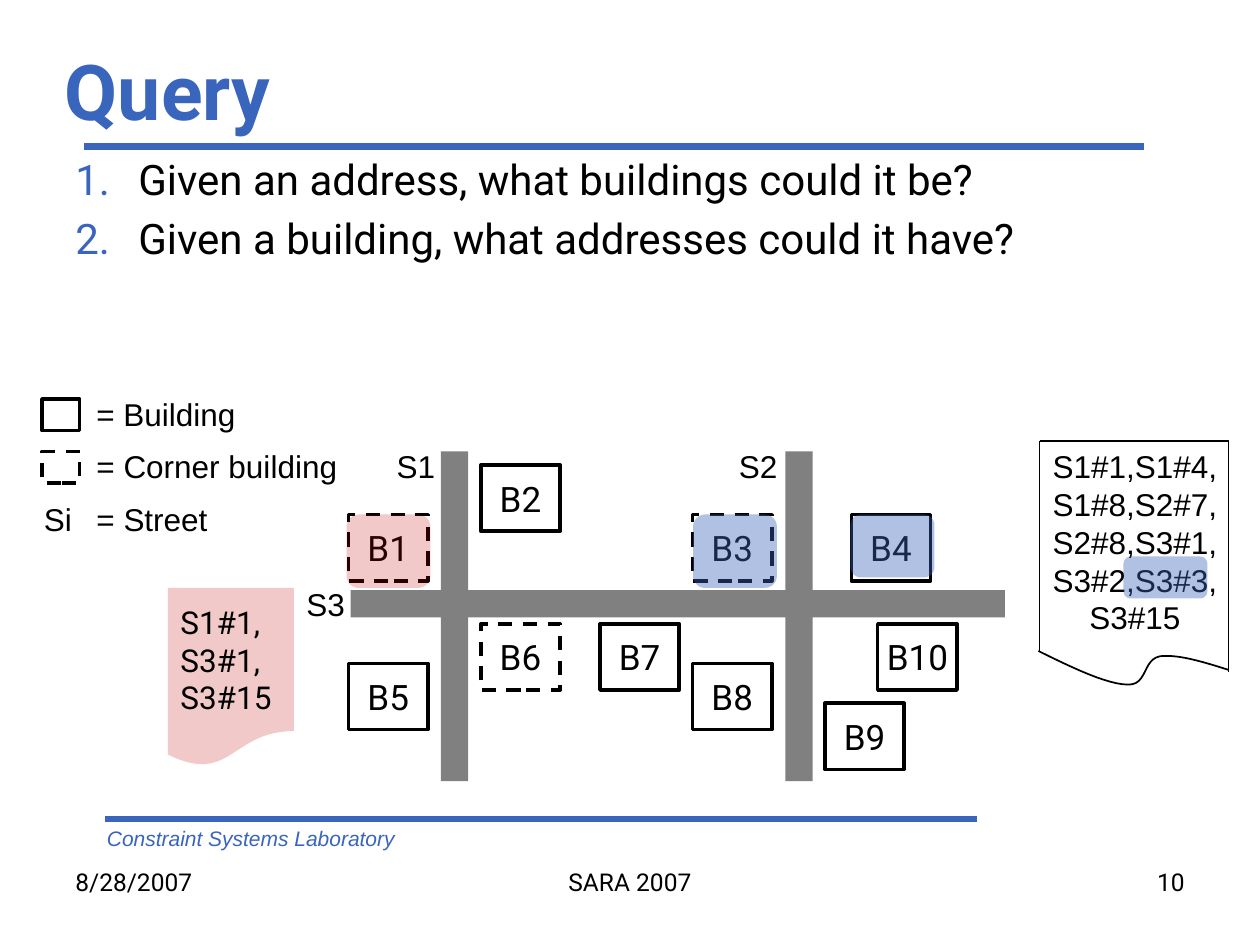
"""Build the Query slide: a street map of buildings with possible addresses."""
import lxml.etree
import pptx
import pptx.dml.color
import pptx.enum.dml
import pptx.enum.shapes
import pptx.enum.text
import pptx.oxml.ns
import pptx.util

COLORS = {"blue": "3A65BC", "black": "000000", "white": "FFFFFF", "gray": "808080", "red": "C00000"}
SHAPES = pptx.enum.shapes.MSO_SHAPE
ALIGN = pptx.enum.text.PP_ALIGN
ANCHOR = pptx.enum.text.MSO_ANCHOR
FIT = pptx.enum.text.MSO_AUTO_SIZE.SHAPE_TO_FIT_TEXT
DASH = pptx.enum.dml.MSO_LINE.DASH
RGB = pptx.dml.color.RGBColor.from_string
qn = pptx.oxml.ns.qn

deck = pptx.Presentation()
deck.slide_width, deck.slide_height = pptx.util.Inches(10), pptx.util.Inches(7.5)
page = deck.slides.add_slide(deck.slide_layouts[6])
cell = deck.slide_width // 120


def write(box, lines, size, face="Roboto", color="black", align=ALIGN.LEFT, frame=None, font=None):
    """Fill a box with one paragraph per line."""
    for name, value in {"word_wrap": True, **(frame or {})}.items():
        setattr(box.text_frame, name, value)
    for index, line in enumerate(lines):
        para = box.text_frame.paragraphs[0] if index == 0 else box.text_frame.add_paragraph()
        para.alignment = align
        span = para.add_run()
        span.text = line
        span.font.color.rgb = RGB(COLORS[color])
        for name, value in {"size": pptx.util.Pt(size), "name": face, **(font or {})}.items():
            setattr(span.font, name, value)
    return box


def draw(kind, grid, fill, opacity=100, outline=0, dash=None):
    """Add a preset shape placed in grid columns and rows."""
    shape = page.shapes.add_shape(kind, *[round(cell * part) for part in grid])
    shape.shadow.inherit = False
    shape.fill.solid()
    shape.fill.fore_color.rgb = RGB(COLORS[fill])
    if opacity < 100:
        color = shape.fill._xPr.find(".//" + qn("a:srgbClr"))
        lxml.etree.SubElement(color, qn("a:alpha"), val=str(opacity * 1000))
    if outline:
        shape.line.color.rgb = RGB(COLORS["black"])
        shape.line.width = pptx.util.Pt(outline)
        shape.line.dash_style = dash
    else:
        shape.line.fill.background()
    return shape


rules = [
    ((8, 14, 109, 14), "blue", 4),
    ((10, 78, 93, 78), "blue", 4),
    ((99, 42, 117, 42), "black", 1),
    ((99, 62, 99, 42), "black", 1),
    ((117, 64, 117, 42), "black", 1),
]
for ends, color, width in rules:
    rule = page.shapes.add_connector(pptx.enum.shapes.MSO_CONNECTOR.STRAIGHT, *[cell * end for end in ends])
    rule.line.color.rgb = RGB(COLORS[color])
    rule.line.width = pptx.util.Pt(width)
    lxml.etree.SubElement(rule._element.spPr, qn("a:effectLst"))

roads = [(33.4, 56.2, 62.3, 2.6), (42, 43, 2.6, 31.4), (74.8, 43, 2.6, 31.4)]
for road in roads:
    draw(SHAPES.RECTANGLE, road, "gray")

step = 1.26
buildings = [
    ("B1", 0, 3.75, DASH), ("B2", 10, 0, None), ("B3", 26, 3.75, DASH), ("B4", 38, 3.75, None),
    ("B5", 0, 15, None), ("B6", 10, 12, DASH), ("B7", 19, 12, None), ("B8", 26, 15, None),
    ("B9", 36, 18, None), ("B10", 40, 12, None),
]
for name, column, row, dash in buildings:
    place = (33.2 + step * column, 44.3 + step * row, 6 * step, 5 * step)
    building = draw(SHAPES.RECTANGLE, place, "white", outline=2, dash=dash)
    write(building, [name], 20, align=ALIGN.CENTER,
          frame={"vertical_anchor": ANCHOR.MIDDLE, "word_wrap": False})

for row, dash in ((38, None), (43, DASH)):
    draw(SHAPES.RECTANGLE, (4, row, 3.6, 3), "white", outline=2, dash=dash)

addresses = ["S1#1,S1#4,", "S1#8,S2#7,", "S2#8,S3#1,", "S3#2,S3#3,", "S3#15"]
middle = {"vertical_anchor": ANCHOR.MIDDLE}
label = {"size": 18, "face": "Arial", "frame": {"word_wrap": False, "auto_size": FIT}}
footer = {"size": 14}
texts = [
    ((5, 4, 108, 9), ["Query"],
     {"size": 44, "color": "blue", "frame": middle, "font": {"bold": True}}),
    ((9, 78, 63, 3.6), ["Constraint Systems Laboratory"],
     {"size": 12, "face": "Arial", "color": "blue", "font": {"italic": True}}),
    ((6, 82, 28, 6.2), ["8/28/2007"], footer),
    ((41, 82, 38, 6.2), ["SARA 2007"], {**footer, "align": ALIGN.CENTER}),
    ((86, 82, 28, 6.2), ["10"], {**footer, "align": ALIGN.RIGHT}),
    ((36.6, 42, 6.1, 4.8), ["S1"], label),
    ((69.2, 42, 6.1, 4.8), ["S2"], label),
    ((28, 55.1, 6.1, 4.8), ["S3"], label),
    ((3, 47, 5.2, 4.8), ["Si"], label),
    ((8, 37, 15.8, 4.8), ["= Building"], label),
    ((8, 42, 25.6, 4.8), ["= Corner building"], label),
    ((8, 47, 13.1, 4.8), ["= Street"], label),
    ((99, 42, 18.2, 19.4), addresses, {**label, "align": ALIGN.CENTER}),
]
for grid, lines, style in texts:
    write(page.shapes.add_textbox(*[round(cell * part) for part in grid]), lines, **style)

questions = write(
    page.shapes.add_textbox(*[cell * part for part in (6, 14, 107, 26)]),
    ["Given an address, what buildings could it be?", "Given a building, what addresses could it have?"], 24)
for index, para in enumerate(questions.text_frame.paragraphs):
    para.space_before = pptx.util.Pt(5 * index)
    settings = para._p.get_or_add_pPr()
    settings.set("marL", str(6 * cell))
    settings.set("indent", str(-6 * cell))
    tint = lxml.etree.SubElement(settings, qn("a:buClr"))
    lxml.etree.SubElement(tint, qn("a:srgbClr"), val=COLORS["blue"])
    lxml.etree.SubElement(settings, qn("a:buAutoNum"), type="arabicPeriod")

start = (98.9, 62)
curves = [
    ((102.1, 63.6), (105.5, 65.2), (107.4, 65.2)),
    ((109.3, 65.3), (108.8, 62.8), (110.5, 62.5)),
    ((112.1, 62.3), (114.5, 63), (117, 63.8)),
]
points = [start]
for curve in curves:
    anchors = (points[-1], *curve)
    for part in range(1, 13):
        share = part / 12
        weights = [count * share ** power * (1 - share) ** (3 - power)
                   for power, count in enumerate((1, 3, 3, 1))]
        points.append(tuple(sum(weight * anchor[axis] for weight, anchor in zip(weights, anchors))
                            for axis in (0, 1)))
outline = [(round(cell * column), round(cell * row)) for column, row in points]
builder = page.shapes.build_freeform(*outline[0])
builder.add_line_segments(outline[1:], close=False)
torn_edge = builder.convert_to_shape()
torn_edge.shadow.inherit = False
torn_edge.fill.background()
torn_edge.line.color.rgb = RGB(COLORS["black"])
torn_edge.line.width = pptx.util.Pt(1)

highlights = [
    ((107, 53, 8, 4), "blue", 40),
    ((81, 49, 8, 6), "blue", 40),
    ((66, 49, 8, 7), "blue", 40),
    ((33, 49, 8, 7), "red", 21),
]
for grid, color, opacity in highlights:
    draw(SHAPES.ROUNDED_RECTANGLE, grid, color, opacity)

note = draw(SHAPES.FLOWCHART_DOCUMENT, (16, 56, 12, 17), "red", 21)
write(note, ["S1#1,", "S3#1,", "S3#15"], 18, frame=middle)

deck.save("out.pptx")
